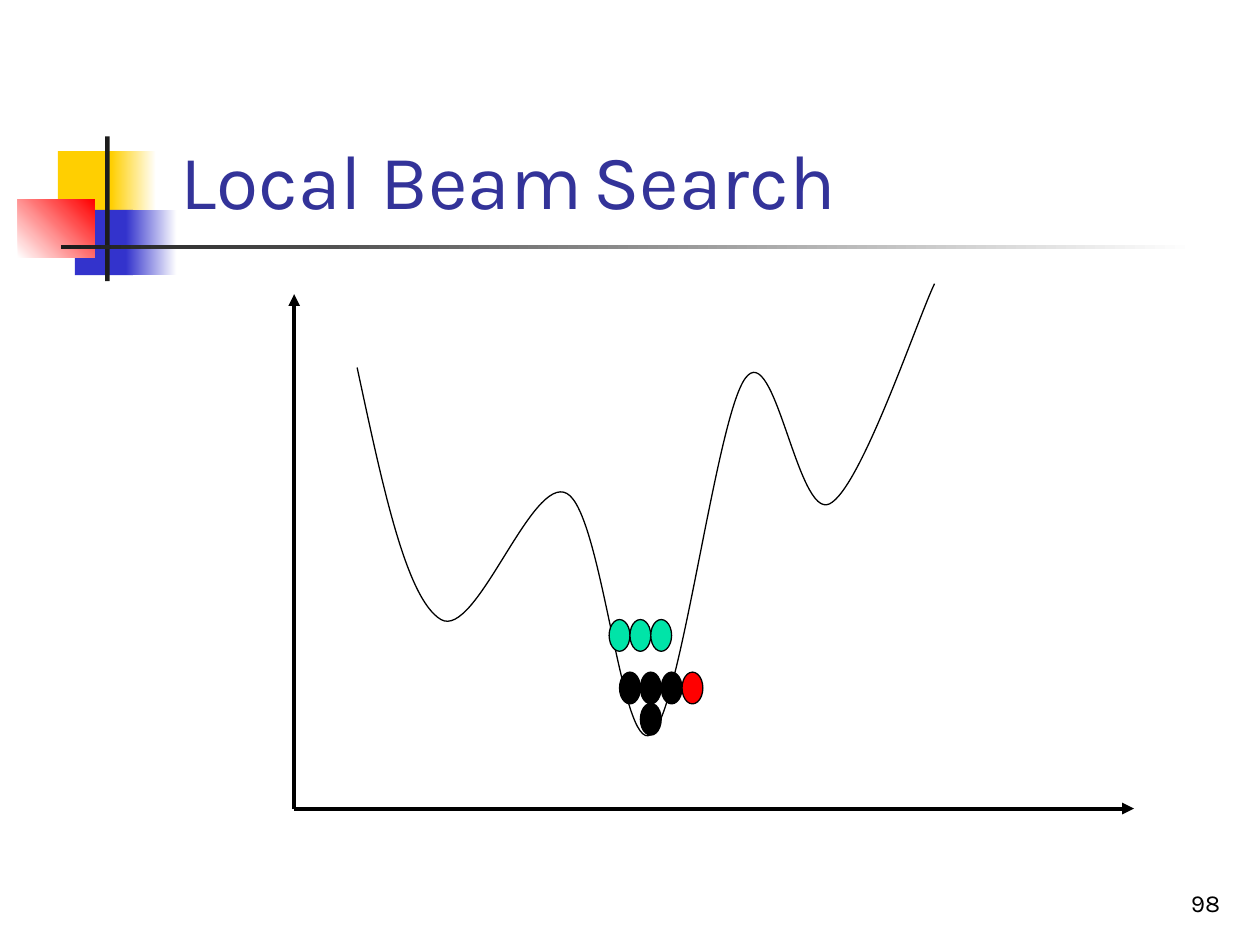
from lxml.etree import SubElement as Sub
from pptx import Presentation
from pptx.dml.color import RGBColor as Rgb
from pptx.enum.shapes import MSO_CONNECTOR as Link, MSO_SHAPE as Kind
from pptx.enum.text import MSO_ANCHOR as Anchor, PP_ALIGN as Align
from pptx.oxml.ns import qn
from pptx.util import Cm, Pt

HUES = {
    "white": "FFFFFF", "black": "000000", "ink": "1C1C1C", "gold": "FFCF01",
    "blue": "3333CC", "red": "FF0000", "green": "00E4A8", "title": "333399",
}
BARS = [
    (1.17, 3.05, 1.22, 1.32, ["gold"], 0),
    (2.24, 3.05, 0.91, 1.32, ["gold", "white"], 0),
    (1.51, 4.23, 1.17, 1.32, ["blue"], 0),
    (2.54, 4.23, 1.02, 1.32, ["blue", "white"], 0),
    (0.36, 4.02, 1.55, 1.18, ["white", "red"], 45),
    (2.12, 2.75, 0.09, 2.92, ["ink"], 0),
    (1.23, 4.94, 22.86, 0.09, ["ink", "white"], 0),
]
CURVE = [
    (7.2, 7.41), (7.7, 9.73), (8.18, 12.07),
    (8.89, 12.49), (9.6, 12.9), (10.72, 9.55),
    (11.43, 9.95), (12.14, 10.34), (12.52, 15.21),
    (13.12, 14.81), (13.72, 14.43), (14.43, 8.41),
    (15.03, 7.62), (15.62, 6.83), (16.08, 10.46),
    (16.72, 10.16), (17.35, 9.86), (18.49, 6.45),
    (18.84, 5.72),
]
ROWS = [
    (12.28, 12.49, ["green"] * 3),
    (12.91, 14.18, ["black"]),
    (12.49, 13.55, ["black"] * 3 + ["red"]),
]
STEP = 0.42


class Deck:
    """Holds the style and the current slide."""

    def __init__(self, font="Karla"):
        self.font = font
        self.prs = Presentation()
        self.prs.slide_width, self.prs.slide_height = Cm(25.4), Cm(19.05)
        self.shapes = self.prs.slides.add_slide(self.prs.slide_layouts[6]).shapes

    def hue(self, name):
        return Rgb.from_string(HUES[name])

    def edge(self, shape, width=0.75):
        shape.line.color.rgb = self.hue("black")
        shape.line.width = Pt(width)

    def solid(self, shape, name):
        shape.fill.solid()
        shape.fill.fore_color.rgb = self.hue(name)

    def bar(self, x, y, w, h, names, angle):
        box = self.shapes.add_shape(Kind.RECTANGLE, Cm(x), Cm(y), Cm(w), Cm(h))
        box.shadow.inherit = False
        box.line.fill.background()
        if len(names) == 1:
            self.solid(box, names[0])
            return
        box.fill.gradient()
        box.fill.gradient_angle = angle
        for stop, name in zip(box.fill.gradient_stops, names):
            stop.color.rgb = self.hue(name)

    def dot(self, x, y, name):
        dot = self.shapes.add_shape(Kind.OVAL, Cm(x), Cm(y), Cm(STEP), Cm(0.64))
        dot.shadow.inherit = False
        self.solid(dot, name)
        self.edge(dot)

    def axis(self, x, y, to_x, to_y):
        axis = self.shapes.add_connector(Link.STRAIGHT, Cm(x), Cm(y), Cm(to_x), Cm(to_y))
        self.edge(axis, 2.25)
        Sub(axis.line._get_or_add_ln(), qn("a:tailEnd"), type="triangle")
        Sub(axis._element.spPr, qn("a:effectLst"))

    def curve(self, knots):
        spots = [(Cm(x), Cm(y)) for x, y in knots]
        pen = self.shapes.build_freeform(*spots[0])
        pen.add_line_segments(spots[1:], close=False)
        line = pen.convert_to_shape()
        line.shadow.inherit = False
        line.fill.background()
        self.edge(line)
        track = next(line._element.iter(qn("a:path")))
        legs = track.findall(qn("a:lnTo"))
        for i in range(0, len(legs), 3):
            bend = Sub(track, qn("a:cubicBezTo"))
            for leg in legs[i:i + 3]:
                bend.append(leg[0])
                track.remove(leg)

    def text(self, x, y, w, h, words, size, name, align=Align.LEFT):
        frame = self.shapes.add_textbox(Cm(x), Cm(y), Cm(w), Cm(h)).text_frame
        frame.word_wrap = True
        frame.vertical_anchor = Anchor.BOTTOM
        para = frame.paragraphs[0]
        para.alignment = align
        for word in words:
            run = para.add_run()
            run.text = word
            run.font.name = self.font
            run.font.size = Pt(size)
            run.font.color.rgb = self.hue(name)
        return para


def main():
    deck = Deck()
    for bar in BARS:
        deck.bar(*bar)
    deck.text(19.57, 17.35, 5.28, 1.27, ["98"], 14, "black", Align.RIGHT)
    title = deck.text(3.39, 2.37, 21.64, 2.29, ["Local Beam", " ", "Search"], 44, "title")
    gap = title.runs[1].font
    gap.size, gap.italic = Pt(28), True
    gap.color.rgb = deck.hue("gold")
    deck.axis(5.93, 16.3, 5.93, 5.93)
    deck.axis(5.93, 16.3, 22.86, 16.3)
    deck.curve(CURVE)
    for x, y, names in ROWS:
        for i, name in enumerate(names):
            deck.dot(x + i * STEP, y, name)
    deck.prs.save("out.pptx")


if __name__ == "__main__":
    main()
